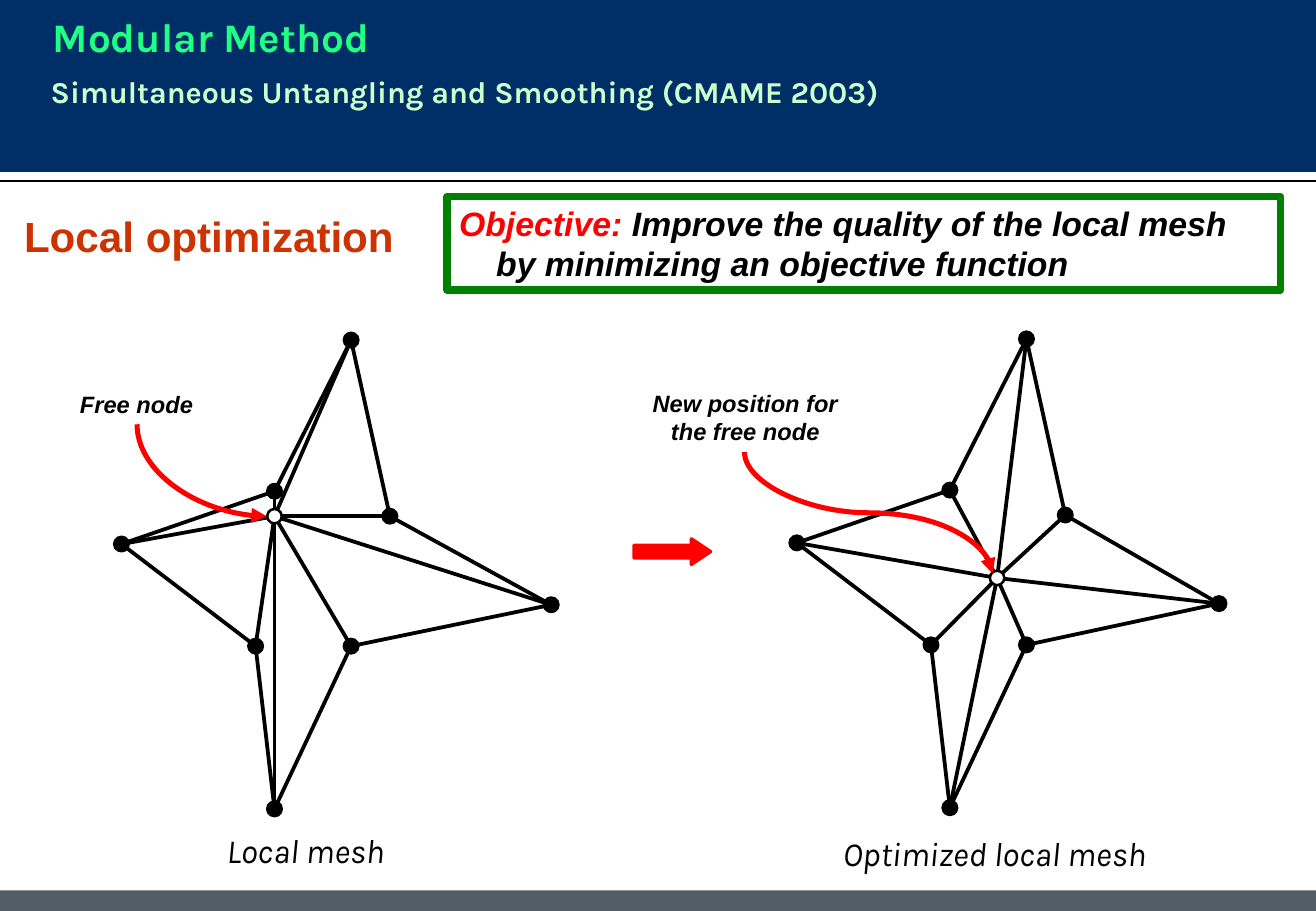
"""Build a slide on local mesh optimization, before and after moving the free node."""
import pptx
import pptx.util
import pptx.dml.color
import pptx.enum.shapes
import pptx.enum.text
import pptx.oxml
import pptx.oxml.ns
from lxml import etree

Pt = pptx.util.Pt
SHAPE = pptx.enum.shapes.MSO_SHAPE
LINK = pptx.enum.shapes.MSO_CONNECTOR
ALIGN = pptx.enum.text.PP_ALIGN
ANCHOR = pptx.enum.text.MSO_ANCHOR
qn = pptx.oxml.ns.qn

COLORS = {
    "navy": "002E67", "slate": "525E66", "black": "000000", "white": "FFFFFF",
    "red": "FF0000", "green": "008000", "rust": "CC3300",
    "mint": "21FF85", "pale": "CCFFCC",
}
RING = [(208.1, 201.6), (231.1, 306), (326.7, 358.5), (208.1, 383),
        (162.7, 479.5), (151.5, 383), (72, 322.5), (162.7, 291.2)]
TIP = 2
DOT = 8.6


def rgb(name):
    return pptx.dml.color.RGBColor.from_string(COLORS[name])


def shape(slide, kind, x, y, w, h, fill=None, line=None, width=1.5):
    item = slide.shapes.add_shape(kind, Pt(x), Pt(y), Pt(w), Pt(h))
    item.shadow.inherit = False
    if fill:
        item.fill.solid()
        item.fill.fore_color.rgb = rgb(fill)
    else:
        item.fill.background()
    if line:
        item.line.color.rgb = rgb(line)
        item.line.width = Pt(width)
    else:
        item.line.fill.background()
    return item


def link(slide, kind, start, end, color="black", width=2.25):
    item = slide.shapes.add_connector(kind, *map(Pt, start + end))
    item.line.color.rgb = rgb(color)
    item.line.width = Pt(width)
    etree.SubElement(item.element.spPr, qn("a:effectLst"))
    return item


def curve(slide, preset, start, end):
    (x1, y1), (x2, y2) = start, end
    w, h = y2 - y1, x2 - x1
    left, top = (x1 + x2 - w) / 2, (y1 + y2 - h) / 2
    item = link(slide, LINK.CURVE, (left, top), (left + w, top + h), "red", 3)
    props = item.element.spPr
    frame = props.find(qn("a:xfrm"))
    frame.set("rot", "16200000")
    frame.set("flipH", "1")
    props.find(qn("a:prstGeom")).set("prst", preset)
    etree.SubElement(props.find(qn("a:ln")), qn("a:tailEnd"), type="triangle")


def style(run, size, color, font="Arial", bold=False, italic=False):
    run.font.size = Pt(size)
    run.font.name = font
    run.font.bold = bold
    run.font.italic = italic
    run.font.color.rgb = rgb(color)


def write(item, text, size, color, align=ALIGN.LEFT, anchor=ANCHOR.TOP, **look):
    frame = item.text_frame
    frame.text = text
    frame.word_wrap = True
    frame.auto_size = pptx.enum.text.MSO_AUTO_SIZE.NONE
    frame.vertical_anchor = anchor
    para = frame.paragraphs[0]
    para.alignment = align
    style(para.runs[0], size, color, **look)
    return para


def label(slide, box, text, size, color, **look):
    item = slide.shapes.add_textbox(*map(Pt, box))
    write(item, text, size, color, **look)


def mesh(slide, ring, free):
    for i, node in enumerate(ring):
        link(slide, LINK.STRAIGHT, ring[i - 1], node)
        link(slide, LINK.STRAIGHT, free, node)
    for x, y in ring + [free]:
        fill = "white" if (x, y) == free else "black"
        shape(slide, SHAPE.OVAL, x - DOT / 2, y - DOT / 2, DOT, DOT, fill, "black")


def header(slide):
    shape(slide, SHAPE.RECTANGLE, 0, 0, 780, 102, "navy")
    link(slide, LINK.STRAIGHT, (0, 107.3), (780, 107.3), width=0.75)
    shape(slide, SHAPE.RECTANGLE, 0, 527.8, 780, 12.2, "slate")
    title = slide.shapes.title
    title.element.getparent().append(title.element)
    title.left, title.top, title.width, title.height = map(Pt, (24, 3.6, 613, 45))
    write(title, "Modular Method", 24, "mint", font="Karla", bold=True)
    label(slide, (23, 39.6, 633, 46),
          "Simultaneous Untangling and Smoothing (CMAME 2003)",
          18, "pale", font="Karla", bold=True)


def goal(slide):
    box = shape(slide, SHAPE.RECTANGLE, 265, 116.6, 494, 55.4, None, "green", 4.5)
    box.text_frame.margin_right = Pt(25)
    para = write(box, "Objective: ", 20, "red", bold=True, italic=True)
    run = para.add_run()
    run.text = "Improve the quality of the local mesh by minimizing an objective function"
    style(run, 20, "black", bold=True, italic=True)
    props = para._p.get_or_add_pPr()
    props.set("marL", str(Pt(22)))
    props.set("indent", str(Pt(-22)))


def main():
    deck = pptx.Presentation()
    deck.slide_width, deck.slide_height = Pt(780), Pt(540)
    slide = deck.slides.add_slide(deck.slide_layouts[5])
    header(slide)
    label(slide, (7.2, 121, 249, 37.5), "Local optimization", 25, "rust",
          anchor=ANCHOR.MIDDLE, bold=True)
    goal(slide)

    moved = [(x + 400.3, y - 0.7) for x, y in RING]
    moved[TIP] = (722.5, 357.8)
    mesh(slide, RING, (162.7, 306))
    mesh(slide, moved, (591, 342.6))

    note = {"align": ALIGN.CENTER, "bold": True, "italic": True}
    label(slide, (30.2, 227.5, 101.5, 24), "Free node", 14, "black", **note)
    label(slide, (373, 226.8, 137.5, 41), "New position for the free node",
          14, "black", **note)
    curve(slide, "curvedConnector2", (81.2, 251.5), (158, 306))
    curve(slide, "curvedConnector3", (441.3, 268), (588.3, 340))
    arrow = shape(slide, SHAPE.RIGHT_ARROW, 375.8, 319.4, 45.4, 15.2, "red", "red", 2)
    arrow.adjustments[1] = 0.75

    label(slide, (115.2, 488, 131.8, 32), "Local mesh", 20, "black",
          align=ALIGN.CENTER, font="Karla", italic=True)
    label(slide, (492.5, 490.3, 218, 32), "Optimized local mesh", 20, "black",
          font="Karla", italic=True)
    deck.save("out.pptx")


if __name__ == "__main__":
    main()
